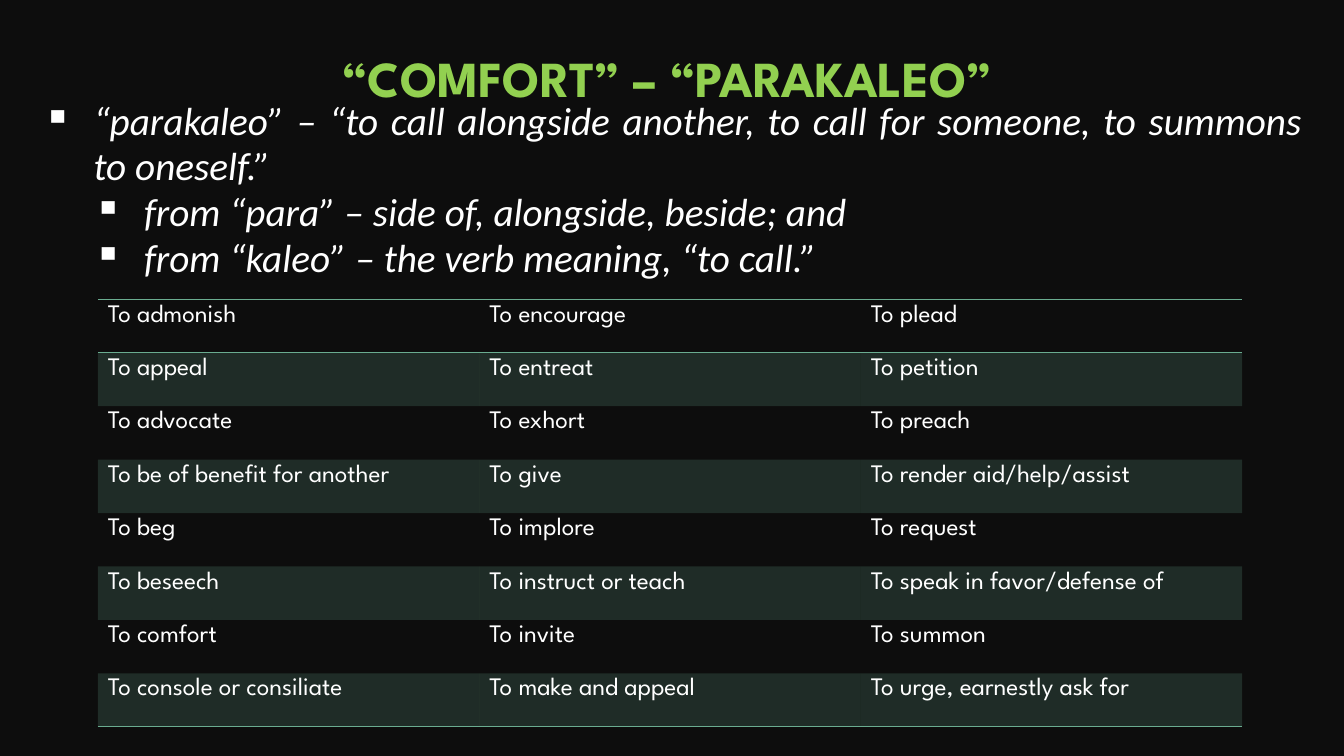
"""Build the slide on the meanings of the word parakaleo."""
import dataclasses

import pptx
import pptx.dml.color
import pptx.enum.text
import pptx.oxml.ns
import pptx.oxml.xmlchemy
import pptx.util


@dataclasses.dataclass(frozen=True)
class Theme:
    background: str = "0D0D0D"
    text: str = "FFFFFF"
    title: str = "92D050"
    accent: str = "6AAC90"
    band_alpha: int = 20000
    heading_font: str = "League Spartan"
    body_font: str = "Calibri"
    title_size: int = 36
    body_size: int = 28
    table_size: int = 18


THEME = Theme()
NO_GRID_STYLE = "{2D5ABB26-0587-4C30-8999-92F81FD0307C}"
TITLE = "“COMFORT” – “PARAKALEO”"
DEFINITIONS = [
    (0, "“parakaleo” – “to call alongside another, to call for someone, to summons to oneself.”"),
    (1, "from “para” – side of, alongside, beside; and"),
    (1, "from “kaleo” – the verb meaning, “to call.”"),
]
MEANINGS = [
    ("To admonish", "To encourage", "To plead"),
    ("To appeal", "To entreat", "To petition"),
    ("To advocate", "To exhort", "To preach"),
    ("To be of benefit for another", "To give", "To render aid/help/assist"),
    ("To beg", "To implore", "To request"),
    ("To beseech", "To instruct or teach", "To speak in favor/defense of"),
    ("To comfort", "To invite", "To summon"),
    ("To console or consiliate", "To make and appeal", "To urge, earnestly ask for"),
]


def rgb(color):
    return pptx.dml.color.RGBColor.from_string(color)


def inches(*lengths):
    return [pptx.util.Inches(length) for length in lengths]


def add_element(parent, tag, **attributes):
    element = pptx.oxml.xmlchemy.OxmlElement(tag)
    for name, value in attributes.items():
        element.set(name, str(value))
    parent.append(element)
    return element


def add_run(paragraph, text, font_name, size, color, bold=False, italic=False):
    run = paragraph.add_run()
    run.text = text
    run.font.name = font_name
    run.font.size = pptx.util.Pt(size)
    run.font.color.rgb = rgb(color)
    run.font.bold = bold
    run.font.italic = italic


def add_text_frame(slide, left, top, width, height):
    box = slide.shapes.add_textbox(*inches(left, top, width, height))
    box.text_frame.word_wrap = True
    return box.text_frame


def add_title(slide):
    frame = add_text_frame(slide, 0.23, 0.28, 12.78, 0.94)
    frame.margin_top = pptx.util.Inches(0.19)
    paragraph = frame.paragraphs[0]
    paragraph.alignment = pptx.enum.text.PP_ALIGN.CENTER
    add_run(paragraph, TITLE, THEME.heading_font, THEME.title_size, THEME.title, bold=True)


def add_definitions(slide):
    frame = add_text_frame(slide, 0.33, 0.93, 12.68, 2.39)
    frame.auto_size = pptx.enum.text.MSO_AUTO_SIZE.SHAPE_TO_FIT_TEXT
    for index, (level, text) in enumerate(DEFINITIONS):
        paragraph = frame.add_paragraph() if index else frame.paragraphs[0]
        paragraph.level = level
        paragraph.alignment = pptx.enum.text.PP_ALIGN.JUSTIFY
        paragraph.line_spacing = 0.97
        properties = paragraph._p.get_or_add_pPr()
        margin, indent = inches(0.5 * (level + 1), -0.5)
        properties.set("marL", str(margin))
        properties.set("indent", str(indent))
        add_element(properties, "a:buChar", char="▪")
        add_run(paragraph, text, THEME.body_font, THEME.body_size, THEME.text, italic=True)


def add_border(cell, tag):
    line = add_element(cell._tc.get_or_add_tcPr(), tag, w=pptx.util.Pt(1))
    fill = add_element(line, "a:solidFill")
    add_element(fill, "a:srgbClr", val=THEME.accent)


def fill_band(cell):
    cell.fill.solid()
    cell.fill.fore_color.rgb = rgb(THEME.accent)
    fill = cell._tc.tcPr.find(pptx.oxml.ns.qn("a:solidFill"))
    add_element(fill[0], "a:alpha", val=THEME.band_alpha)


def add_meanings(slide):
    row_count, column_count = len(MEANINGS), len(MEANINGS[0])
    frame = slide.shapes.add_table(row_count, column_count, *inches(0.97, 2.97, 11.35, 4.24))
    table = frame.table
    table.first_row = table.horz_banding = False
    table._tbl.tblPr.find(pptx.oxml.ns.qn("a:tableStyleId")).text = NO_GRID_STYLE
    for row_index, row in enumerate(MEANINGS):
        for column_index, text in enumerate(row):
            cell = table.cell(row_index, column_index)
            paragraph = cell.text_frame.paragraphs[0]
            add_run(paragraph, text, THEME.heading_font, THEME.table_size, THEME.text)
            if row_index == 0:
                add_border(cell, "a:lnT")
            if row_index in (0, row_count - 1):
                add_border(cell, "a:lnB")
            if row_index % 2:
                fill_band(cell)
            else:
                cell.fill.background()


def main():
    presentation = pptx.Presentation()
    presentation.slide_width, presentation.slide_height = inches(13.33, 7.5)
    slide = presentation.slides.add_slide(presentation.slide_layouts[6])
    slide.background.fill.solid()
    slide.background.fill.fore_color.rgb = rgb(THEME.background)
    add_title(slide)
    add_definitions(slide)
    add_meanings(slide)
    presentation.save("out.pptx")


if __name__ == "__main__":
    main()
